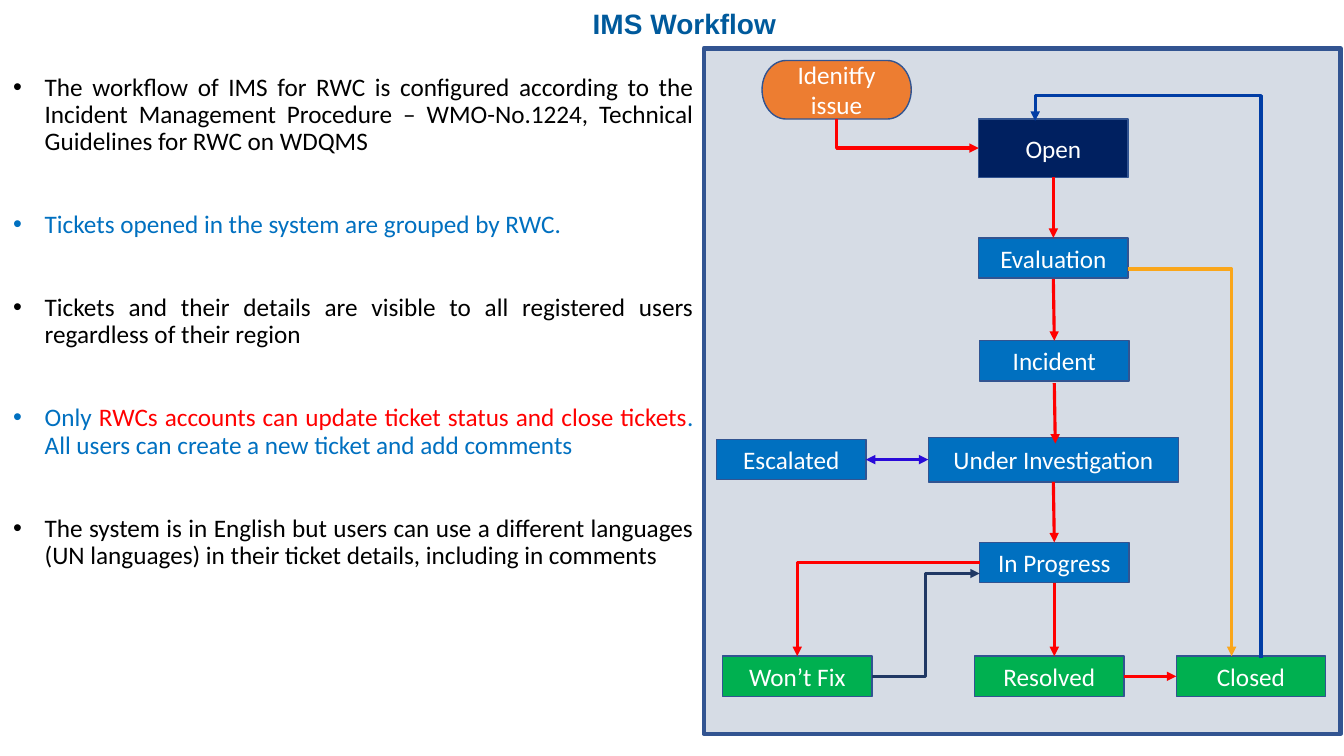
from dataclasses import dataclass

from lxml.etree import SubElement
from pptx import Presentation
from pptx.dml.color import RGBColor
from pptx.enum.shapes import MSO_CONNECTOR, MSO_SHAPE
from pptx.enum.text import MSO_ANCHOR, MSO_AUTO_SIZE, PP_ALIGN
from pptx.oxml.ns import qn
from pptx.shapes.base import BaseShape
from pptx.slide import Slide
from pptx.text.text import TextFrame, _Paragraph
from pptx.util import Pt


@dataclass(frozen=True)
class Theme:
    title_font: str = "Arial"
    body_font: str = "Calibri"
    title_size: float = 20
    body_size: float = 18
    link_width: float = 2.25
    heading: str = "005A9C"
    black: str = "000000"
    white: str = "FFFFFF"
    panel: str = "D6DCE5"
    outline: str = "325491"
    navy: str = "002060"
    blue: str = "0070C0"
    green: str = "00B050"
    orange: str = "ED7D31"
    red: str = "FF0000"
    amber: str = "FAA61A"
    reopen: str = "013DA5"
    violet: str = "290AD9"
    slate: str = "203864"


THEME = Theme()


@dataclass(frozen=True)
class Step:
    label: str
    left: float
    top: float
    fill: str = THEME.blue
    width: float = 106.6
    height: float = 28.8
    kind: MSO_SHAPE = MSO_SHAPE.FLOWCHART_PROCESS


@dataclass(frozen=True)
class Link:
    start: tuple[float, float]
    end: tuple[float, float]
    color: str = THEME.red
    preset: str = "line"
    vertical_first: bool = False
    bend: float | None = None
    both_ends: bool = False


BULLETS = [
    [("The workflow of IMS for RWC is configured according to the Incident Management "
      "Procedure – WMO-No.1224, Technical Guidelines for RWC on WDQMS", THEME.black)],
    [("Tickets opened in the system are grouped by RWC.", THEME.blue)],
    [("Tickets and their details are visible to all registered users regardless of "
      "their region", THEME.black)],
    [("Only ", THEME.blue),
     ("RWCs accounts can update ticket status and close tickets", THEME.red),
     (". All users can create a new ticket and add comments", THEME.blue)],
    [("The system is in English but users can use a different languages (UN languages) "
      "in their ticket details, including in comments", THEME.black)],
]

STEPS = [
    Step("Idenitfy issue", 544.3, 43.2, THEME.orange, height=41.8,
         kind=MSO_SHAPE.FLOWCHART_TERMINATOR),
    Step("Open", 699.1, 85, THEME.navy, height=41.8),
    Step("Evaluation", 699.1, 169.9),
    Step("Incident", 699.8, 243.4),
    Step("Under Investigation", 663.1, 312.5, width=178.6, height=31.7),
    Step("Escalated", 511.9, 313.9),
    Step("In Progress", 699.8, 387.4),
    Step("Won’t Fix", 516.2, 468.7, THEME.green),
    Step("Resolved", 696.2, 468.7, THEME.green),
    Step("Closed", 840.2, 468.7, THEME.green),
]

LINKS = [
    Link((597.6, 85), (699.1, 105.8), preset="bentConnector2", vertical_first=True),
    Link((752.4, 126.7), (752.4, 169.9)),
    Link((752.4, 199.4), (753.1, 243.4)),
    Link((753.1, 273.6), (753.8, 316.8)),
    Link((752.4, 344.2), (753.1, 387.4)),
    Link((753.1, 416.2), (753.1, 468.7)),
    Link((802.8, 483.1), (840.2, 483.1)),
    Link((618.5, 328.3), (663.1, 328.3), THEME.violet, both_ends=True),
    Link((699.8, 401.8), (569.5, 468.7), preset="bentConnector2"),
    Link((622.8, 483.1), (699.8, 409.7), THEME.slate, "bentConnector3"),
    Link((805.7, 192.2), (879.8, 468.7), THEME.amber, "bentConnector2"),
    Link((900.7, 470.2), (739.4, 86.4), THEME.reopen, "bentConnector3",
         vertical_first=True, bend=1.047),
]


def add_span(para: _Paragraph, text: str, *, color: str, font: str = THEME.body_font,
             size: float = THEME.body_size, bold: bool = False) -> None:
    span = para.add_run()
    span.text = text
    span.font.name = font
    span.font.size = Pt(size)
    span.font.bold = bold
    span.font.color.rgb = RGBColor.from_string(color)


def place(shape: BaseShape, left: float, top: float, width: float, height: float) -> None:
    shape.left, shape.top = Pt(left), Pt(top)
    shape.width, shape.height = Pt(width), Pt(height)


def add_title(page: Slide) -> None:
    title = page.shapes.title
    place(title, 36, 3.6, 905.8, 23.8)
    frame: TextFrame = title.text_frame
    frame.margin_left = frame.margin_right = frame.margin_top = frame.margin_bottom = 0
    frame.vertical_anchor = MSO_ANCHOR.TOP
    frame.auto_size = MSO_AUTO_SIZE.SHAPE_TO_FIT_TEXT
    para = frame.paragraphs[0]
    para.alignment = PP_ALIGN.CENTER
    para.line_spacing = 1.05
    add_span(para, "IMS Workflow", color=THEME.heading, font=THEME.title_font,
             size=THEME.title_size, bold=True)


def add_bullets(page: Slide) -> None:
    body = page.placeholders[1]
    place(body, 2.2, 49.7, 500.4, 465.1)
    frame: TextFrame = body.text_frame
    frame.auto_size = MSO_AUTO_SIZE.NONE
    for index, spans in enumerate(BULLETS):
        para = frame.add_paragraph() if index else frame.paragraphs[0]
        para.alignment = PP_ALIGN.JUSTIFY
        para.line_spacing = 0.9
        para.space_before = Pt(39.8 if index else 10)
        properties = para._p.get_or_add_pPr()
        properties.set("marL", str(Pt(22.5)))
        properties.set("indent", str(-Pt(22.5)))
        for text, color in spans:
            add_span(para, text, color=color)


def add_box(page: Slide, step: Step, line_width: float = 1) -> None:
    box = page.shapes.add_shape(step.kind, Pt(step.left), Pt(step.top),
                                Pt(step.width), Pt(step.height))
    box.shadow.inherit = False
    box.fill.solid()
    box.fill.fore_color.rgb = RGBColor.from_string(step.fill)
    box.line.color.rgb = RGBColor.from_string(THEME.outline)
    box.line.width = Pt(line_width)
    if step.label:
        box.text_frame.vertical_anchor = MSO_ANCHOR.MIDDLE
        para = box.text_frame.paragraphs[0]
        para.alignment = PP_ALIGN.CENTER
        add_span(para, step.label, color=THEME.white)


def add_link(page: Slide, link: Link) -> None:
    (x1, y1), (x2, y2) = link.start, link.end
    turn = 0
    if link.vertical_first:
        turn = 90 if y2 > y1 else 270
        middle_x, middle_y = (x1 + x2) / 2, (y1 + y2) / 2
        half_width = abs(y2 - y1) / 2
        half_height = (x2 - x1) / 2 * (-1 if y2 > y1 else 1)
        x1, x2 = middle_x - half_width, middle_x + half_width
        y1, y2 = middle_y - half_height, middle_y + half_height
    connector = page.shapes.add_connector(MSO_CONNECTOR.STRAIGHT, Pt(x1), Pt(y1), Pt(x2), Pt(y2))
    connector.line.color.rgb = RGBColor.from_string(link.color)
    connector.line.width = Pt(THEME.link_width)
    properties = connector._element.spPr
    if turn:
        properties.find(qn("a:xfrm")).set("rot", str(turn * 60000))
    geometry = properties.find(qn("a:prstGeom"))
    geometry.set("prst", link.preset)
    if link.bend is not None:
        guide = SubElement(geometry.get_or_add_avLst(), qn("a:gd"))
        guide.set("name", "adj1")
        guide.set("fmla", f"val {round(link.bend * 100000)}")
    line = connector.line._get_or_add_ln()
    for end in ("headEnd", "tailEnd") if link.both_ends else ("tailEnd",):
        SubElement(line, qn(f"a:{end}")).set("type", "triangle")
    SubElement(properties, qn("a:effectLst"))


def main() -> None:
    deck = Presentation()
    deck.slide_width, deck.slide_height = Pt(960), Pt(540)
    page = deck.slides.add_slide(deck.slide_layouts[1])
    add_title(page)
    add_bullets(page)
    add_box(page, Step("", 502.6, 34.6, THEME.panel, 455, 489.6, MSO_SHAPE.RECTANGLE), 3)
    for step in STEPS:
        add_box(page, step)
    for link in LINKS:
        add_link(page, link)
    deck.save("out.pptx")


if __name__ == "__main__":
    main()
